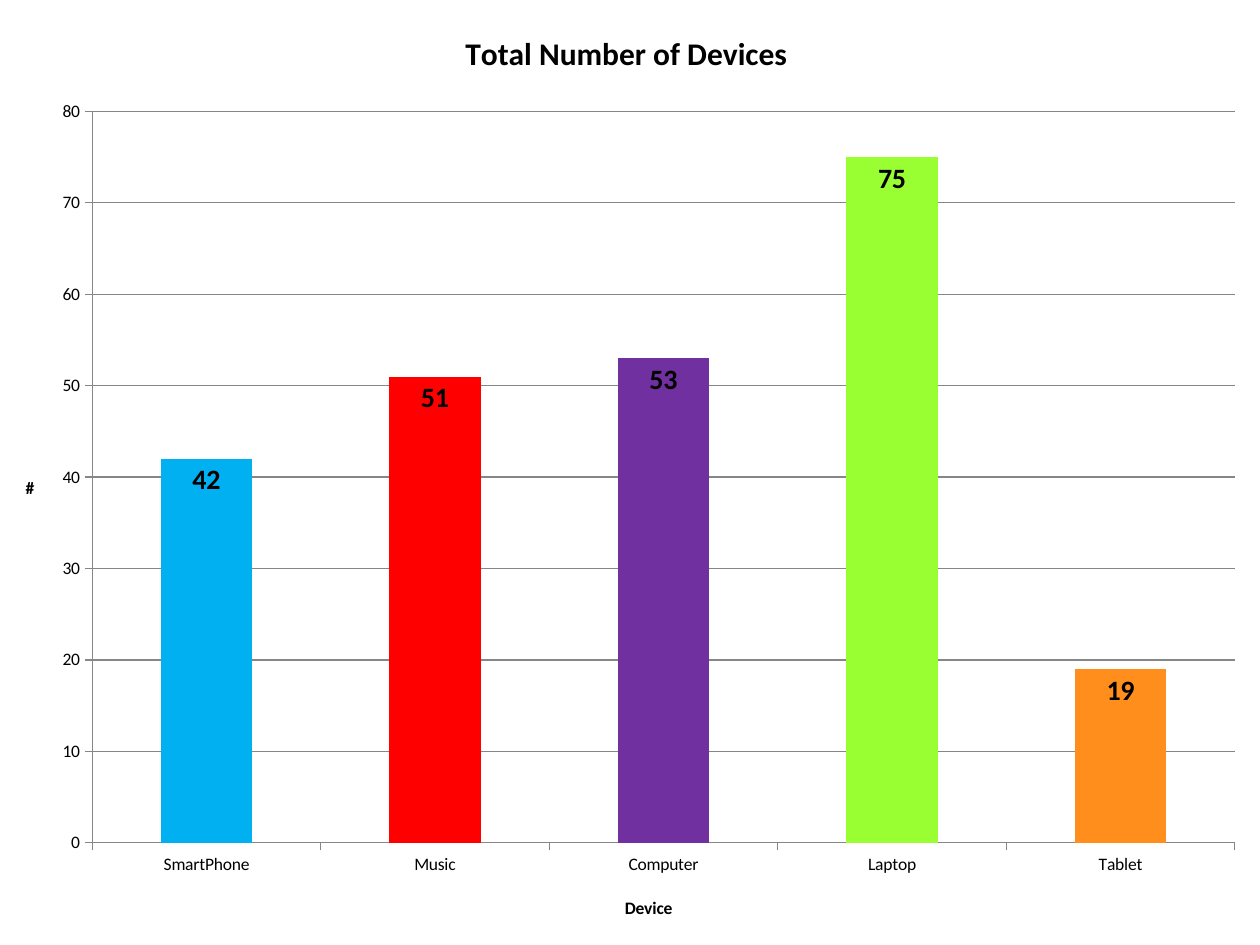
from dataclasses import dataclass

from pptx import Presentation
from pptx.chart.data import CategoryChartData
from pptx.dml.color import RGBColor
from pptx.enum.chart import XL_CHART_TYPE, XL_LABEL_POSITION, XL_TICK_MARK
from pptx.util import Pt

COLUMN = XL_CHART_TYPE.COLUMN_CLUSTERED
IN_END = XL_LABEL_POSITION.INSIDE_END
OUT = XL_TICK_MARK.OUTSIDE
SCALE = 914400 // 126
WIDE, HIGH = 1260, 945


@dataclass(frozen=True)
class Theme:
    font: str = "Calibri"
    ink: str = "000000"
    rule: str = "868686"
    base: str = "4F81BD"
    title: int = 18
    label: int = 16
    body: int = 10


@dataclass(frozen=True)
class Bar:
    name: str
    count: int
    color: str


THEME = Theme()
BARS = [
    Bar("SmartPhone", 42, "00B0F0"),
    Bar("Music", 51, "FF0000"),
    Bar("Computer", 53, "7030A0"),
    Bar("Laptop", 75, "99FF33"),
    Bar("Tablet", 19, "FF8E1D"),
]


def px(count: int) -> int:
    return count * SCALE


def paint(fill, color: str) -> None:
    fill.solid()
    fill.fore_color.rgb = RGBColor.from_string(color)


def style(font, *, size: int, bold: bool = False) -> None:
    font.name = THEME.font
    font.size = Pt(size)
    font.bold = bold
    font.color.rgb = RGBColor.from_string(THEME.ink)


def write(frame, text: str, *, size: int, bold: bool = True) -> None:
    run = frame.paragraphs[0].add_run()
    run.text = text
    style(run.font, size=size, bold=bold)


def rule(line) -> None:
    line.width = Pt(0.75)
    line.color.rgb = RGBColor.from_string(THEME.rule)


def set_axis(axis, text: str) -> None:
    axis.major_tick_mark = OUT
    rule(axis.format.line)
    style(axis.tick_labels.font, size=THEME.body)
    write(axis.axis_title.text_frame, text, size=THEME.body)


def set_bars(plot, bars: list[Bar]) -> None:
    plot.gap_width = 150
    plot.vary_by_categories = False
    series = plot.series[0]
    series.invert_if_negative = False
    paint(series.format.fill, THEME.base)
    for at, bar in enumerate(bars):
        paint(series.points[at].format.fill, bar.color)
    labels = series.data_labels
    labels.show_value = True
    labels.position = IN_END
    style(labels.font, size=THEME.label, bold=True)


def add_bars(slide, bars: list[Bar]) -> None:
    data = CategoryChartData()
    data.categories = [bar.name for bar in bars]
    data.add_series("Series 1", [bar.count for bar in bars])
    chart = slide.shapes.add_chart(
        COLUMN, 0, 0, px(WIDE), px(HIGH), data
    ).chart
    style(chart.font, size=THEME.body)
    chart.has_legend = False
    write(chart.chart_title.text_frame, "Total Number of Devices ",
          size=THEME.title)
    chart.chart_title.include_in_layout = False
    set_axis(chart.category_axis, "Device")
    count = chart.value_axis
    set_axis(count, "#")
    count.axis_title.text_frame._txBody.bodyPr.set("rot", "0")
    count.minimum_scale, count.maximum_scale = 0, 80
    count.major_unit = 10
    count.has_major_gridlines = True
    rule(count.major_gridlines.format.line)
    set_bars(chart.plots[0], bars)


def main() -> None:
    deck = Presentation()
    deck.slide_width, deck.slide_height = px(WIDE), px(HIGH)
    slide = deck.slides.add_slide(deck.slide_layouts[6])
    add_bars(slide, BARS)
    deck.save("out.pptx")


if __name__ == "__main__":
    main()
